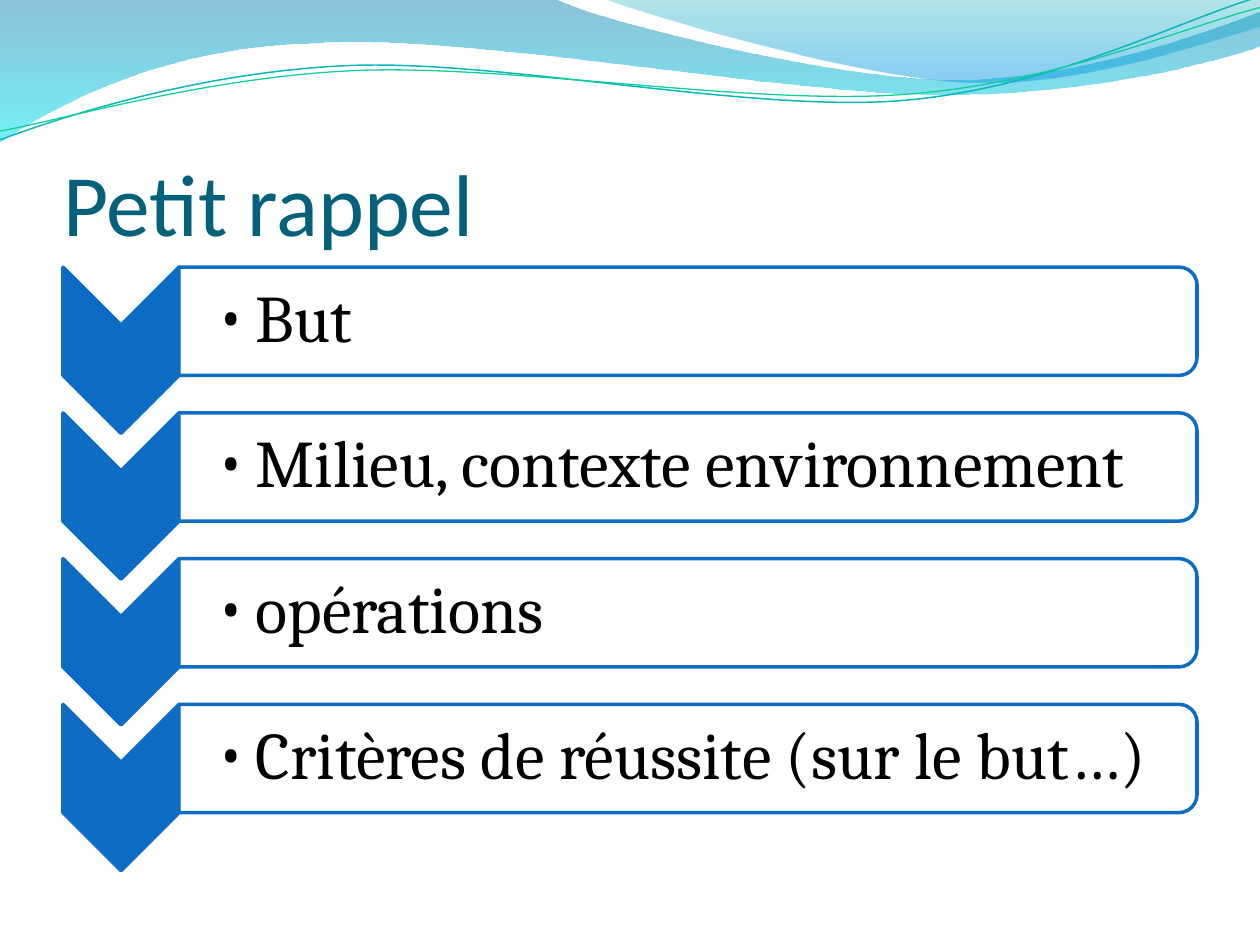
import math

from lxml import etree
from pptx import Presentation, util as u
from pptx.dml.color import RGBColor
from pptx.enum import shapes, text
from pptx.oxml.ns import qn

Inches, Pt = u.Inches, u.Pt
COLORS = {"title": "04617B", "blue": "0D6DC5", "white": "FFFFFF", "black": "000000"}


def set_alpha(sp, opacities):
    """Give the fill colours of a shape their opacity in percent, in order."""
    for clr, opacity in zip(sp.element.spPr.iter(qn("a:srgbClr")), opacities):
        etree.SubElement(clr, qn("a:alpha"), val=str(opacity * 1000))


def draw_curve(slide, segments, close, tilt=0, center=(0, 0)):
    """Draw points (x, y) and cubic curves (x1, y1, x2, y2, x, y) on a shape turned by tilt."""
    cos, sin = math.cos(math.radians(-tilt)), math.sin(math.radians(-tilt))
    cx, cy = center
    pts = []
    for seg in segments:
        for x, y in zip(seg[::2], seg[1::2]):
            dx, dy = x - cx, y - cy
            pts.append((Inches(cx + dx * cos - dy * sin), Inches(cy + dx * sin + dy * cos)))
    builder = slide.shapes.build_freeform(*pts[0])
    builder.add_line_segments(pts[1:], close=close)
    sp = builder.convert_to_shape()
    sp.shadow.inherit = False
    sp.rotation = tilt % 360
    # Join each three points of a curve into one cubic segment
    lines = iter(list(sp.element.iter(qn("a:lnTo"))))
    for seg in segments[1:]:
        first = next(lines)
        if len(seg) == 6:
            first.tag = qn("a:cubicBezTo")
            for line in (next(lines), next(lines)):
                first.append(line[0])
                line.getparent().remove(line)
    return sp


prs = Presentation()
prs.slide_width, prs.slide_height = Inches(10), Inches(7.5)
s = prs.slides.add_slide(prs.slide_layouts[5])

# Filled waves: path, then gradient stops (position, colour, opacity)
waves = [
    ([(0, 0), (4.4, -0.01), (4.76, 0.17, 6.64, 0.63, 7.58, 0.63),
      (8.53, 0.63, 9.58, 0.26, 10, 0.09), (10.01, 0.36),
      (9.83, 0.44, 8.7, 0.76, 7.46, 0.75), (6.22, 0.75, 3.82, 0.28, 2.57, 0.34),
      (1.29, 0.36, 0.46, 0.83, -0.01, 1.13)],
     [(0, "0079AD", 45), (1, "00E9F7", 55)]),
    ([(4.79, -0.01), (5.09, 0.11, 6.82, 0.62, 7.69, 0.65),
      (8.56, 0.69, 9.61, 0.32, 10, 0.21), (10, 0)],
     [(0, "00ABB4", 30), (0.8, "0099E4", 45)]),
]
for segments, stops in waves:
    sp = draw_curve(s, segments, True)
    sp.line.fill.background()
    sp.fill.gradient()
    sp.fill.gradient_angle = 270
    for stop, (position, color, _) in zip(sp.fill.gradient_stops, stops):
        stop.position = position
        stop.color.rgb = RGBColor.from_string(color)
    set_alpha(sp, [opacity for _, _, opacity in stops])

# Thin wave lines, slightly tilted
wave_lines = [
    ([(0, 1.11), (0.48, 0.93, 1.58, 0.57, 2.77, 0.52), (3.95, 0.47, 5.93, 0.89, 7.13, 0.8),
      (8.33, 0.71, 9.38, 0.15, 9.98, -0.02)], (4.99, 0.58), "09B6BE", 0.85),
    ([(0, 1.04), (0.47, 0.96, 1.64, 0.61, 2.83, 0.56), (4.03, 0.51, 5.97, 0.84, 7.17, 0.75),
      (8.36, 0.67, 9.41, 0.21, 10, 0.06)], (5, 0.59), "10CF9B", 0.75),
]
for segments, center, color, width in wave_lines:
    sp = draw_curve(s, segments, False, -2.7, center)
    sp.fill.background()
    sp.line.color.rgb = RGBColor.from_string(color)
    sp.line.width = Pt(width)

# Title, in front of the waves
title = s.shapes.title
s.shapes.element.append(title.element)
title.left, title.top, title.width, title.height = map(Inches, (0.5, 0.77, 9, 1.25))
tf = title.text_frame
frame = {"vertical_anchor": text.MSO_ANCHOR.BOTTOM, "auto_size": text.MSO_AUTO_SIZE.NONE,
         "margin_left": 0, "margin_right": 0, "margin_top": Inches(0.05), "margin_bottom": 0}
for name, value in frame.items():
    setattr(tf, name, value)
p = tf.paragraphs[0]
p.alignment = text.PP_ALIGN.LEFT
r = p.add_run()
r.text = "Petit rappel"
r.font.name, r.font.size = "Calibri", Pt(50)
r.font.color.rgb = RGBColor.from_string(COLORS["title"])

# Chevron list: each row has a chevron, a bar and a bullet text
items = ["But", "Milieu, contexte environnement", "opérations", "Critères de réussite (sur le but…)"]
row_step = 3.47 / 3
row_shapes = [
    (shapes.MSO_SHAPE.CHEVRON, (0.3, 2.32, 1.32, 0.92), [0.5], "blue", 100),
    (shapes.MSO_SHAPE.ROUND_2_SAME_RECTANGLE, (5.03, -1.49, 0.86, 8.08), [0.167, 0], "white", 90),
]
frame = {"word_wrap": True, "vertical_anchor": text.MSO_ANCHOR.MIDDLE, "margin_left": Inches(0.3),
         "margin_right": Inches(0.03), "margin_top": Inches(0.03), "margin_bottom": Inches(0.03)}
for i, item in enumerate(items):
    offset = i * row_step
    for kind, (x, y, w, h), adjustments, fill, opacity in row_shapes:
        sp = s.shapes.add_shape(kind, Inches(x), Inches(y + offset), Inches(w), Inches(h))
        sp.rotation = 90
        sp.shadow.inherit = False
        for n, value in enumerate(adjustments):
            sp.adjustments[n] = value
        sp.fill.solid()
        sp.fill.fore_color.rgb = RGBColor.from_string(COLORS[fill])
        if opacity < 100:
            set_alpha(sp, [opacity])
        sp.line.color.rgb = RGBColor.from_string(COLORS["blue"])
        sp.line.width = Pt(2)

    tf = s.shapes.add_textbox(Inches(1.42), Inches(2.16 + offset), Inches(8.03), Inches(0.77)).text_frame
    for name, value in frame.items():
        setattr(tf, name, value)
    p = tf.paragraphs[0]
    p.level, p.line_spacing = 1, 0.9
    pPr = p._p.get_or_add_pPr()
    pPr.set("marL", str(Inches(0.31)))
    pPr.set("indent", str(Inches(-0.31)))
    bullet_color = etree.SubElement(pPr, qn("a:buClr"))
    etree.SubElement(bullet_color, qn("a:srgbClr"), val=COLORS["black"])
    etree.SubElement(pPr, qn("a:buFont"), typeface="Cambria")
    etree.SubElement(pPr, qn("a:buChar"), char="•")
    r = p.add_run()
    r.text = item
    r.font.name, r.font.size = "Cambria", Pt(38)
    r.font.color.rgb = RGBColor.from_string(COLORS["black"])

prs.save("out.pptx")
